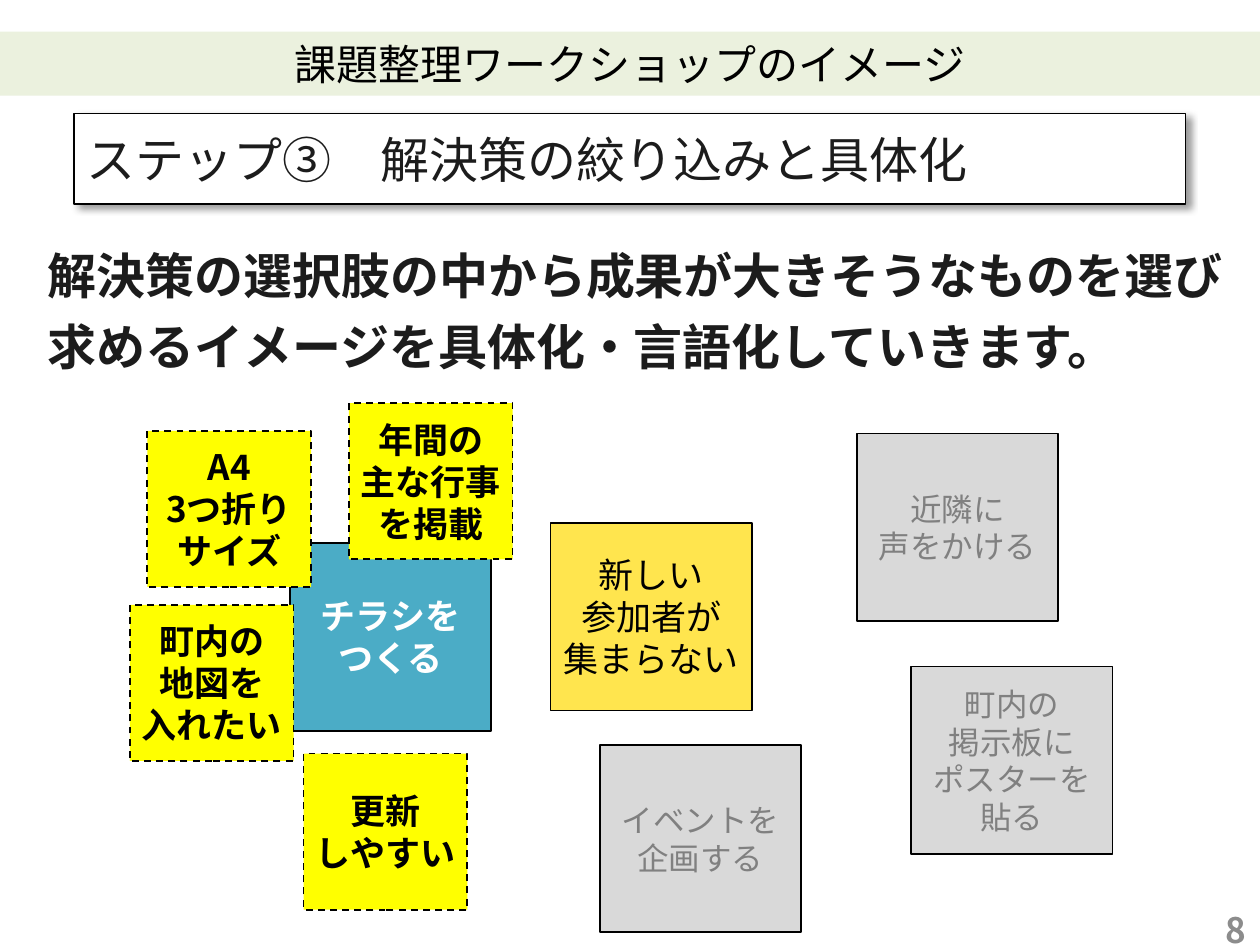
from lxml.etree import SubElement
from pptx import Presentation
from pptx.dml.color import RGBColor
from pptx.enum.dml import MSO_LINE
from pptx.enum.shapes import MSO_SHAPE
from pptx.enum.text import MSO_ANCHOR, MSO_AUTO_SIZE, PP_ALIGN
from pptx.oxml.ns import qn
from pptx.util import Pt

FONT = "Noto Sans CJK JP"
TITLE = "課題整理ワークショップのイメージ"
STEP = "ステップ③　解決策の絞り込みと具体化"
MESSAGE = [
    "解決策の選択肢の中から成果が大きそうなものを選び",
    "求めるイメージを具体化・言語化していきます。",
]
PAGE_NUMBER = "8"

STYLES = {
    "issue": {"box": (115.2, 107.3), "fill": "FFE54E", "text": {"size": 20}},
    "chosen": {"box": (115.2, 107.3), "fill": "4BACC6",
               "text": {"size": 20, "color": "FFFFFF", "bold": True}},
    "dropped": {"box": (115.2, 107.3), "fill": "D9D9D9",
                "text": {"size": 18, "color": "808080"}},
    "detail": {"box": (93.6, 89.3), "fill": "FFFF00", "dash": MSO_LINE.DASH,
               "text": {"size": 20, "bold": True}},
}
NOTES = [
    ("issue", 314.6, 298.8, ["新しい", "参加者が", "集まらない"]),
    ("chosen", 165.6, 310.3, ["チラシを", "つくる"]),
    ("dropped", 489.6, 247.7, ["近隣に", "声をかける"]),
    ("dropped", 342.7, 425.5, ["イベントを", "企画する"]),
    ("dropped", 520.6, 380.9, ["町内の", "掲示板に", "ポスターを", "貼る"]),
    ("detail", 84.2, 246.2, ["A4", "3つ折り", "サイズ"]),
    ("detail", 74.2, 345.6, ["町内の", "地図を", "入れたい"]),
    ("detail", 173.5, 430.6, ["更新", "しやすい"]),
    ("detail", 199.4, 230.4, ["年間の", "主な行事", "を掲載"]),
]


def rgb(value):
    return RGBColor.from_string(value)


def assign(target, values):
    for name, value in values.items():
        setattr(target, name, value)


def paint(shape, fill):
    shape.fill.solid()
    shape.fill.fore_color.rgb = rgb(fill)


def write(shape, lines, size, color="000000", bold=False, align=PP_ALIGN.CENTER,
          anchor=MSO_ANCHOR.MIDDLE, wrap=True, leading=1.2, gap=0):
    frame = shape.text_frame
    assign(frame, {"auto_size": MSO_AUTO_SIZE.NONE, "word_wrap": wrap,
                   "vertical_anchor": anchor})
    frame.text = "\n".join(lines)
    for paragraph in frame.paragraphs:
        assign(paragraph, {"alignment": align, "line_spacing": Pt(size * leading),
                           "space_before": Pt(0), "space_after": Pt(gap)})
        for run in paragraph.runs:
            assign(run.font, {"size": Pt(size), "bold": bold, "name": FONT})
            run.font.color.rgb = rgb(color)
            SubElement(run.font._element, qn("a:ea"), typeface=FONT)


def add_box(slide, left, top, width, height, fill, dash=None):
    shape = slide.shapes.add_shape(
        MSO_SHAPE.RECTANGLE, Pt(left), Pt(top), Pt(width), Pt(height))
    shape.shadow.inherit = False
    paint(shape, fill)
    shape.line.color.rgb = rgb("000000")
    assign(shape.line, {"width": Pt(1), "dash_style": dash})
    return shape


def cast_shadow(shape):
    effects = shape._element.spPr.find(qn("a:effectLst"))
    shadow = SubElement(effects, qn("a:outerShdw"), blurRad=str(Pt(4)),
                        dist=str(Pt(3)), dir="2700000", algn="tl", rotWithShape="0")
    color = SubElement(shadow, qn("a:srgbClr"), val="000000")
    SubElement(color, qn("a:alpha"), val="40000")


def main():
    presentation = Presentation()
    assign(presentation, {"slide_width": Pt(720), "slide_height": Pt(540)})
    slide = presentation.slides.add_slide(presentation.slide_layouts[5])

    title = slide.shapes.title
    assign(title, {"left": Pt(0), "top": Pt(18), "width": Pt(720), "height": Pt(36.7)})
    paint(title, "EBF1DE")
    write(title, [TITLE], 24)

    number = slide.shapes.add_textbox(Pt(551.5), Pt(522.7), Pt(167.8), Pt(17.3))
    write(number, [PAGE_NUMBER], 20, "8C8C8C", True, PP_ALIGN.RIGHT)

    message = slide.shapes.add_textbox(Pt(20.2), Pt(140.4), Pt(691.9), Pt(89.3))
    write(message, MESSAGE, 28, "1C1C1C", True, PP_ALIGN.LEFT, MSO_ANCHOR.TOP,
          leading=1.08, gap=9.8)

    step = add_box(slide, 42.5, 64.8, 635, 51.8, "FFFFFF")
    cast_shadow(step)
    write(step, [STEP], 28, "1C1C1C", align=PP_ALIGN.LEFT)

    for kind, left, top, lines in NOTES:
        style = STYLES[kind]
        note = add_box(slide, left, top, *style["box"], style["fill"], style.get("dash"))
        write(note, lines, wrap=False, **style["text"])

    presentation.save("out.pptx")


if __name__ == "__main__":
    main()
